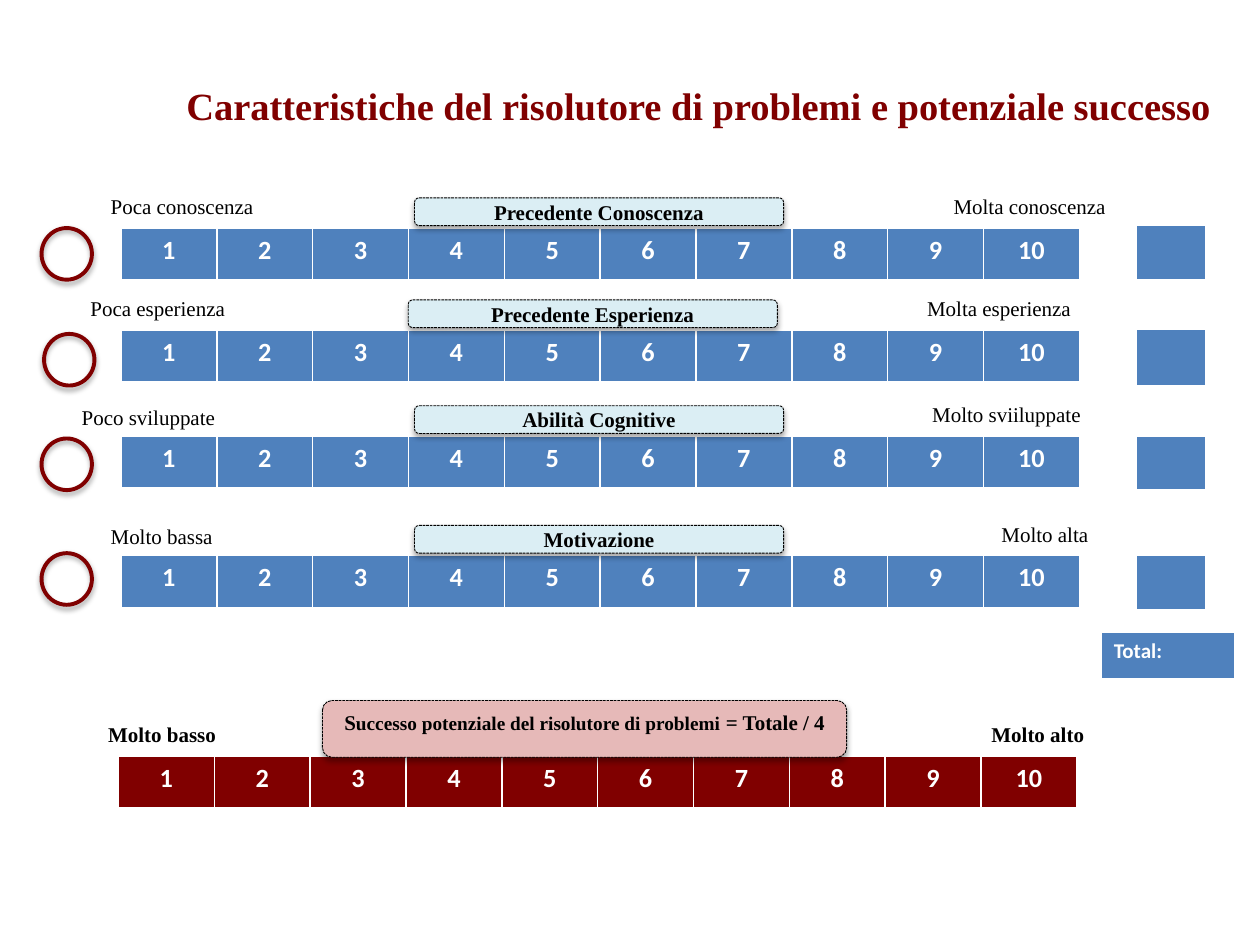
import pptx
import pptx.util
import pptx.dml.color
import pptx.enum.dml
import pptx.enum.shapes
import pptx.enum.text
import pptx.oxml
import pptx.oxml.ns

Inches = pptx.util.Inches
Pt = pptx.util.Pt
RGBColor = pptx.dml.color.RGBColor
Shape = pptx.enum.shapes.MSO_SHAPE
Align = pptx.enum.text.PP_ALIGN
Anchor = pptx.enum.text.MSO_ANCHOR

BLUE = RGBColor(0x4F, 0x81, 0xBD)
MAROON = RGBColor(0x80, 0x00, 0x00)
PALE_BLUE = RGBColor(0xDB, 0xEE, 0xF4)
PINK = RGBColor(0xE6, 0xB9, 0xB8)
BLACK = RGBColor(0, 0, 0)
WHITE = RGBColor(0xFF, 0xFF, 0xFF)

SCALE = [str(number) for number in range(1, 11)]
SCALE_WIDTH, SCALE_HEIGHT = 7.61, 0.41
SCORE_LEFT, SCORE_WIDTH = 9.02, 0.55

# scale top, heading (text, left, top), low and high labels (text, left, top),
# circle (left, top), score box (top, height)
FACTORS = [
    (1.81, ("Precedente Conoscenza", 3.29, 1.57), ("Poca conoscenza", 0.78, 1.49),
     ("Molta conoscenza", 7.47, 1.49), (0.33, 1.81), (1.79, 0.43)),
    (2.62, ("Precedente Esperienza", 3.24, 2.38), ("Poca esperienza", 0.62, 2.3),
     ("Molta esperienza", 7.26, 2.3), (0.35, 2.65), (2.61, 0.45)),
    (3.46, ("Abilità Cognitive", 3.29, 3.22), ("Poco sviluppate", 0.55, 3.16),
     ("Molto sviiluppate", 7.3, 3.14), (0.33, 3.48), (3.46, 0.43)),
    (4.41, ("Motivazione", 3.29, 4.17), ("Molto bassa", 0.78, 4.11),
     ("Molto alta", 7.85, 4.09), (0.33, 4.39), (4.41, 0.43)),
]


class Page:
    serif = "Times New Roman"
    sans = "Calibri"

    def __init__(self, deck):
        self.slide = deck.slides.add_slide(deck.slide_layouts[5])
        self.shapes = self.slide.shapes

    def style(self, para, size, color=BLACK, bold=False, font=None, align=Align.LEFT):
        para.alignment = align
        para.font.name = font or self.serif
        para.font.size = Pt(size)
        para.font.bold = bold
        para.font.color.rgb = color

    def title(self, text, left, top, width, height):
        box = self.shapes.title
        box.left, box.top = Inches(left), Inches(top)
        box.width, box.height = Inches(width), Inches(height)
        box.text_frame.text = text
        box.text_frame.vertical_anchor = Anchor.TOP
        self.style(box.text_frame.paragraphs[0], 22, MAROON, True)

    def label(self, text, left, top, width=1.4, bold=False):
        box = self.shapes.add_textbox(Inches(left), Inches(top), Inches(width), Inches(0.3))
        box.text_frame.word_wrap = True
        box.text_frame.margin_right = 0
        box.text_frame.text = text
        self.style(box.text_frame.paragraphs[0], 12, bold=bold)

    def table(self, texts, left, top, width, height, fill=BLUE, size=15, align=Align.CENTER):
        table = self.shapes.add_table(1, len(texts), Inches(left), Inches(top),
                                      Inches(width), Inches(height)).table
        table.horz_banding = False
        for cell, text in zip(table.rows[0].cells, texts):
            cell.fill.solid()
            cell.fill.fore_color.rgb = fill
            cell.text = text
            self.style(cell.text_frame.paragraphs[0], size, WHITE, True, self.sans, align)

    def soft_shadow(self, shape):
        shape.shadow.inherit = False
        effects = shape._element.spPr.find(pptx.oxml.ns.qn("a:effectLst"))
        effects.append(pptx.oxml.parse_xml(
            f'<a:outerShdw {pptx.oxml.ns.nsdecls("a")} blurRad="{Pt(3.1)}" dist="{Pt(1.8)}" '
            'dir="5400000" rotWithShape="0"><a:srgbClr val="000000">'
            '<a:alpha val="35000"/></a:srgbClr></a:outerShdw>'))

    def heading(self, spans, left, top, width, height, fill, anchor=Anchor.MIDDLE):
        """Dashed rounded box; spans are (text, size) pairs."""
        box = self.shapes.add_shape(Shape.ROUNDED_RECTANGLE, Inches(left), Inches(top),
                                    Inches(width), Inches(height))
        box.fill.solid()
        box.fill.fore_color.rgb = fill
        box.line.color.rgb = BLACK
        box.line.width = Pt(0.5)
        box.line.dash_style = pptx.enum.dml.MSO_LINE.SQUARE_DOT
        self.soft_shadow(box)
        box.text_frame.vertical_anchor = anchor
        para = box.text_frame.paragraphs[0]
        for text, size in spans:
            span = para.add_run()
            span.text = text
            span.font.size = Pt(size)
        self.style(para, 12, bold=True, align=Align.CENTER)

    def circle(self, left, top):
        ring = self.shapes.add_shape(Shape.OVAL, Inches(left), Inches(top),
                                     Inches(0.4), Inches(0.41))
        ring.fill.background()
        ring.line.color.rgb = MAROON
        ring.line.width = Pt(2.25)
        self.soft_shadow(ring)


def main():
    deck = pptx.Presentation()
    deck.slide_width, deck.slide_height = Inches(10), Inches(7.5)
    page = Page(deck)
    page.title("Caratteristiche del risolutore di problemi e potenziale successo",
               1.38, 0.6, 9.98, 0.47)

    for scale_top, (name, left, top), low, high, circle, (score_top, score_height) in FACTORS:
        page.table(SCALE, 0.96, scale_top, SCALE_WIDTH, SCALE_HEIGHT)
        page.heading([(name, 12)], left, top, 2.93, 0.22, PALE_BLUE)
        page.label(*low)
        page.label(*high)
        page.circle(*circle)
        page.table([""], SCORE_LEFT, score_top, SCORE_WIDTH, score_height)

    page.table(["Total:"], 8.74, 5.02, 1.06, 0.37, size=12, align=Align.LEFT)
    page.label("Molto basso", 0.76, 5.68, 1.07, bold=True)
    page.label("Molto alto", 7.77, 5.68, 0.95, bold=True)
    page.table(SCALE, 0.94, 6, SCALE_WIDTH, SCALE_HEIGHT, MAROON)
    page.heading([("S", 12), ("uccesso potenziale del risolutore di problemi", 11),
                  (" = Totale / 4", 12)], 2.56, 5.56, 4.16, 0.45, PINK, Anchor.TOP)
    deck.save("out.pptx")


if __name__ == "__main__":
    main()
